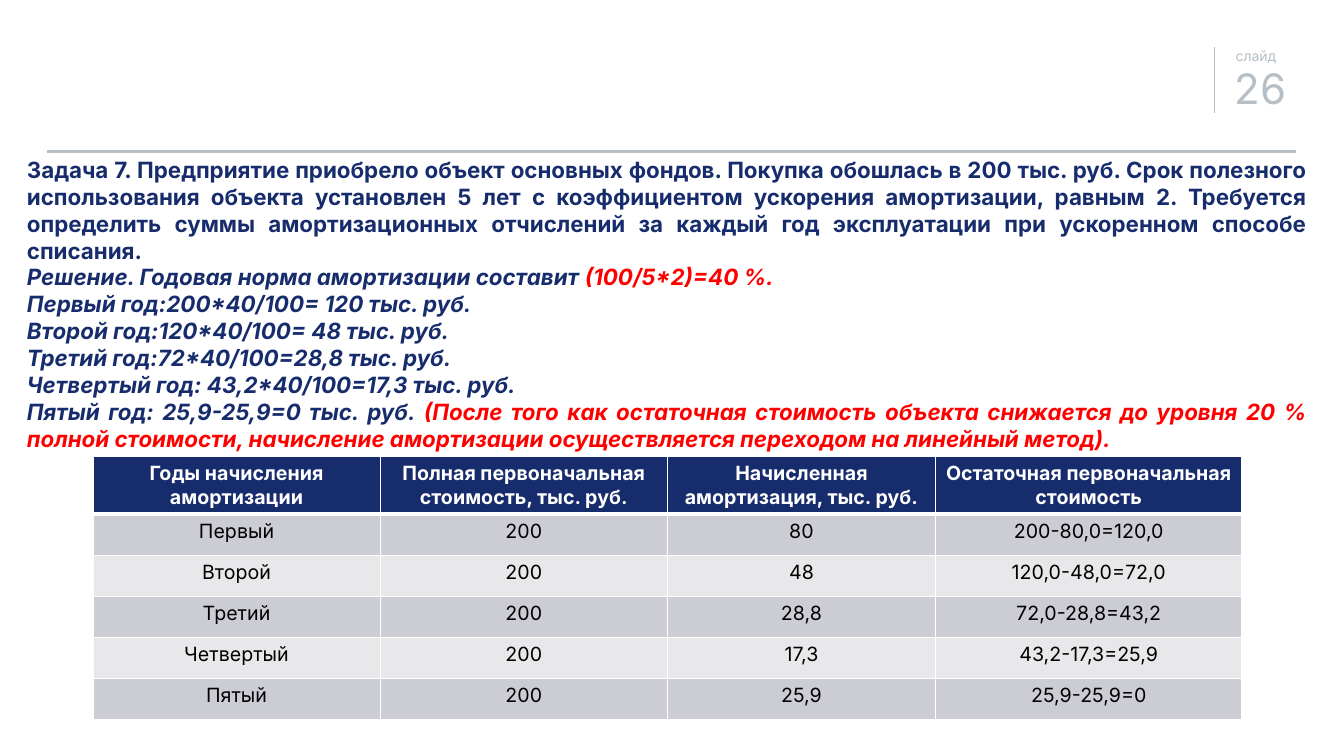
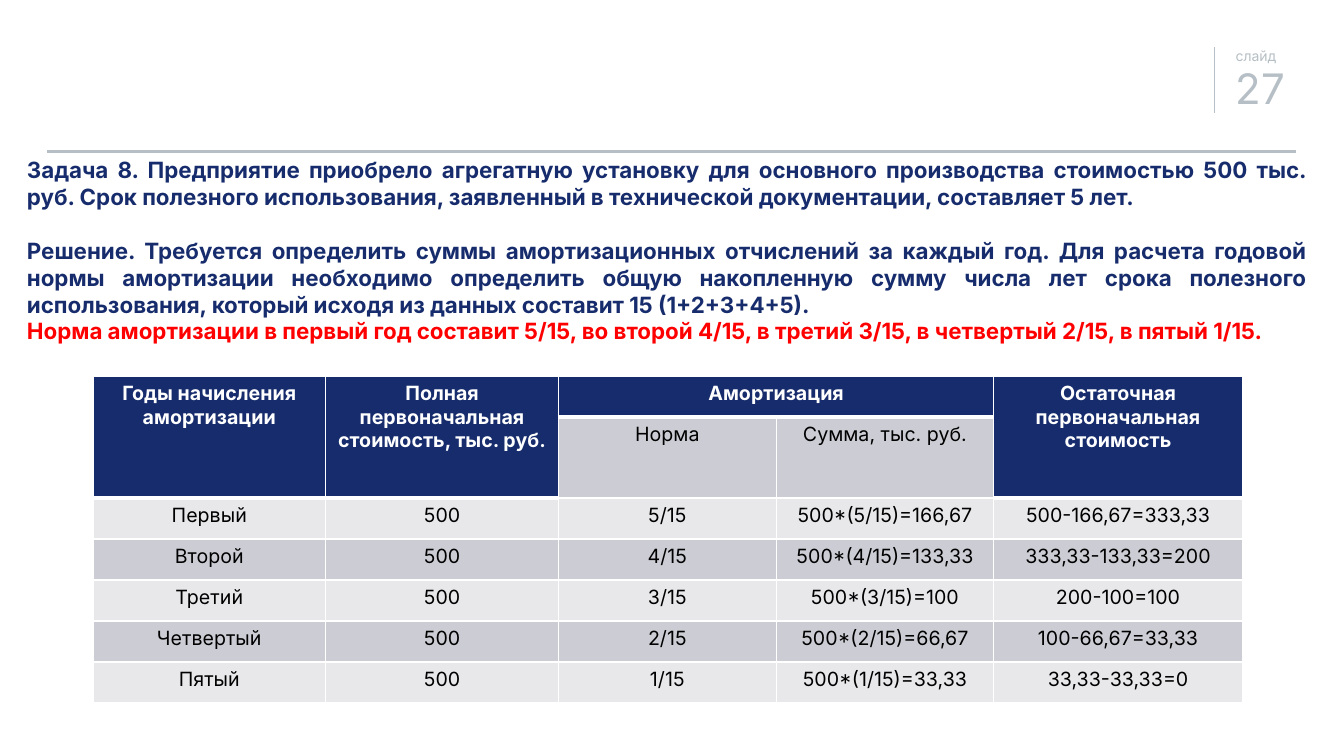
from dataclasses import dataclass
from typing import NamedTuple

from lxml.etree import SubElement
from pptx import Presentation
from pptx.dml.color import RGBColor
from pptx.enum.shapes import MSO_CONNECTOR
from pptx.enum.text import PP_ALIGN
from pptx.oxml.ns import qn
from pptx.slide import Slide
from pptx.table import Table, _Cell
from pptx.text.text import Font
from pptx.util import Pt

NAVY = RGBColor(0x17, 0x2C, 0x6C)
RED = RGBColor(0xFF, 0x00, 0x00)
GREY = RGBColor(0xB6, 0xBF, 0xC5)
WHITE = RGBColor(0xFF, 0xFF, 0xFF)
BLACK = RGBColor(0x00, 0x00, 0x00)
BAND_DARK = RGBColor(0xCC, 0xCD, 0xD4)
BAND_LIGHT = RGBColor(0xE8, 0xE8, 0xEB)
FONT = "Inter"
ROW_HEIGHT = 29.3
TABLE_LEFT = 66.4
YEARS = ["Первый", "Второй", "Третий", "Четвертый", "Пятый"]


class Phrase(NamedTuple):
    text: str
    color: RGBColor = NAVY
    italic: bool = False


class Span(NamedTuple):
    top: int
    left: int
    bottom: int
    right: int


@dataclass
class Statement:
    phrases: list[Phrase]
    space_before: float = 0


@dataclass
class Schedule:
    top: float
    widths: list[float]
    header_heights: list[float]
    rows: list[list[str]]
    spans: list[Span]


@dataclass
class Problem:
    number: int
    statements: list[Statement]
    text_height: float
    schedule: Schedule


def style_font(font: Font, size: float, color: RGBColor, bold: bool = False, italic: bool = False) -> None:
    """Apply the deck font with the given size, colour and emphasis."""
    font.name, font.size, font.bold, font.italic = FONT, Pt(size), bold, italic
    font.color.rgb = color


def draw_rule(slide: Slide, start: tuple[float, float], end: tuple[float, float], width: float) -> None:
    """Draw a grey straight rule without a shadow."""
    rule = slide.shapes.add_connector(MSO_CONNECTOR.STRAIGHT, *map(Pt, start + end))
    rule.line.color.rgb = GREY
    rule.line.width = Pt(width)
    SubElement(rule._element.spPr, qn("a:effectLst"))


def draw_header(slide: Slide, number: int) -> None:
    """Draw the rules and the slide number shared by all slides."""
    draw_rule(slide, (867.6, 33.8), (867.6, 80.6), 1)
    draw_rule(slide, (33.8, 108), (925.9, 108), 2)
    badge = slide.shapes.add_textbox(Pt(867.6), Pt(33.8), Pt(59), Pt(47.5)).text_frame
    badge.word_wrap = True
    badge.margin_left = badge.margin_right = badge.margin_bottom = 0
    badge.margin_top = Pt(1.7)
    badge.text = f"слайд\n{number}"
    for paragraph, size, spacing in zip(badge.paragraphs, (10, 30), (10.6, 34.5)):
        paragraph.alignment = PP_ALIGN.CENTER
        paragraph.line_spacing = Pt(spacing)
        style_font(paragraph.runs[0].font, size, GREY)
    badge.paragraphs[1]._p.get_or_add_pPr().set("marL", str(Pt(6.5)))


def draw_statements(slide: Slide, statements: list[Statement], height: float) -> None:
    """Write the task and its solution as justified paragraphs."""
    frame = slide.shapes.add_textbox(Pt(12.2), Pt(108), Pt(928.8), Pt(height)).text_frame
    frame.word_wrap = True
    for index, statement in enumerate(statements):
        paragraph = frame.add_paragraph() if index else frame.paragraphs[0]
        paragraph.alignment = PP_ALIGN.JUSTIFY
        if statement.space_before:
            paragraph.space_before = Pt(statement.space_before)
        for phrase in statement.phrases:
            run = paragraph.add_run()
            run.text = phrase.text
            style_font(run.font, 16, phrase.color, True, phrase.italic)


def style_cell(cell: _Cell, fill: RGBColor, bottom_width: float) -> None:
    """Give a cell white borders and a solid fill."""
    properties = cell._tc.get_or_add_tcPr()
    for side, width in {"lnL": 1, "lnR": 1, "lnT": 1, "lnB": bottom_width}.items():
        border = SubElement(properties, qn(f"a:{side}"), w=str(Pt(width)))
        SubElement(SubElement(border, qn("a:solidFill")), qn("a:srgbClr"), val=str(WHITE))
    cell.fill.solid()
    cell.fill.fore_color.rgb = fill


def fill_cell(table: Table, row: int, column: int, text: str) -> None:
    """Write and format one cell of a schedule."""
    cell = table.cell(row, column)
    heading = row == 0 or cell.is_spanned
    band = BAND_DARK if row % 2 else BAND_LIGHT
    style_cell(cell, NAVY if heading else band, 3 if heading else 1)
    if not cell.is_spanned:
        cell.text_frame.text = text
        paragraph = cell.text_frame.paragraphs[0]
        paragraph.alignment = PP_ALIGN.CENTER
        style_font(paragraph.runs[0].font, 14, WHITE if heading else BLACK, heading)


def draw_schedule(slide: Slide, schedule: Schedule) -> None:
    """Draw the depreciation schedule as a table."""
    body_count = len(schedule.rows) - len(schedule.header_heights)
    heights = schedule.header_heights + [ROW_HEIGHT] * body_count
    table = slide.shapes.add_table(
        len(heights), len(schedule.widths), Pt(TABLE_LEFT), Pt(schedule.top),
        Pt(sum(schedule.widths)), Pt(sum(heights)),
    ).table
    for column, width in zip(table.columns, schedule.widths):
        column.width = Pt(width)
    for row, height in zip(table.rows, heights):
        row.height = Pt(height)
    for span in schedule.spans:
        table.cell(span.top, span.left).merge(table.cell(span.bottom, span.right))
    for row_index, texts in enumerate(schedule.rows):
        for column_index, text in enumerate(texts):
            fill_cell(table, row_index, column_index, text)


ACCELERATED = Problem(
    number=26,
    text_height=278.6,
    statements=[
        Statement([Phrase(
            "Задача 7. Предприятие приобрело объект основных фондов. Покупка обошлась в 200 тыс. руб. "
            "Срок полезного использования объекта установлен 5 лет с коэффициентом ускорения амортизации, "
            "равным 2. Требуется определить суммы амортизационных отчислений за каждый год эксплуатации "
            "при ускоренном способе списания."
        )]),
        Statement([
            Phrase("Решение. Годовая норма амортизации составит ", italic=True),
            Phrase("(100/5*2)=40 %.", RED, True),
        ]),
        *(Statement([Phrase(year, italic=True)]) for year in (
            "Первый год:200*40/100= 120 тыс. руб.",
            "Второй год:120*40/100= 48 тыс. руб.",
            "Третий год:72*40/100=28,8 тыс. руб.",
            "Четвертый год: 43,2*40/100=17,3 тыс. руб.",
        )),
        Statement([
            Phrase("Пятый год: 25,9-25,9=0 тыс. руб. ", italic=True),
            Phrase(
                "(После того как остаточная стоимость объекта снижается до уровня 20 % полной стоимости, "
                "начисление амортизации осуществляется переходом на линейный метод).", RED, True,
            ),
        ]),
    ],
    schedule=Schedule(
        top=326.3,
        widths=[205.2, 205.2, 191.5, 218.9],
        header_heights=[41],
        rows=[
            ["Годы начисления амортизации", "Полная первоначальная стоимость, тыс. руб.",
             "Начисленная амортизация, тыс. руб.", "Остаточная первоначальная стоимость"],
            *([year, "200", charge, balance] for year, charge, balance in zip(
                YEARS,
                ["80", "48", "28,8", "17,3", "25,9"],
                ["200-80,0=120,0", "120,0-48,0=72,0", "72,0-28,8=43,2", "43,2-17,3=25,9", "25,9-25,9=0"],
            )),
        ],
        spans=[],
    ),
)

SUM_OF_YEARS = Problem(
    number=27,
    text_height=220.3,
    statements=[
        Statement([Phrase(
            "Задача 8. Предприятие приобрело агрегатную установку для основного производства стоимостью "
            "500 тыс. руб. Срок полезного использования, заявленный в технической документации, "
            "составляет 5 лет."
        )]),
        Statement([Phrase(
            "Решение. Требуется определить суммы амортизационных отчислений за каждый год. Для расчета "
            "годовой нормы амортизации необходимо определить общую накопленную сумму числа лет срока "
            "полезного использования, который исходя из данных составит 15 (1+2+3+4+5)."
        )], space_before=19.4),
        Statement([Phrase(
            "Норма амортизации в первый год составит 5/15, во второй 4/15, в третий 3/15, "
            "в четвертый 2/15, в пятый 1/15.", RED,
        )]),
    ],
    schedule=Schedule(
        top=268.8,
        widths=[166.3, 166.3, 155.5, 155.5, 177.5],
        header_heights=[ROW_HEIGHT, 57.2],
        rows=[
            ["Годы начисления амортизации", "Полная первоначальная стоимость, тыс. руб.",
             "Амортизация", "", "Остаточная первоначальная стоимость"],
            ["", "", "Норма", "Сумма, тыс. руб.", ""],
            *([year, "500", f"{share}/15", f"500*({share}/15)={charge}", balance]
              for year, share, charge, balance in zip(
                YEARS,
                range(5, 0, -1),
                ["166,67", "133,33", "100", "66,67", "33,33"],
                ["500-166,67=333,33", "333,33-133,33=200", "200-100=100", "100-66,67=33,33", "33,33-33,33=0"],
            )),
        ],
        spans=[Span(0, 0, 1, 0), Span(0, 1, 1, 1), Span(0, 2, 0, 3), Span(0, 4, 1, 4)],
    ),
)


def main() -> None:
    """Build the slides and save the presentation."""
    deck = Presentation()
    deck.slide_width, deck.slide_height = Pt(960), Pt(540)
    blank_layout = deck.slide_layouts[6]
    for problem in (ACCELERATED, SUM_OF_YEARS):
        slide = deck.slides.add_slide(blank_layout)
        draw_header(slide, problem.number)
        draw_statements(slide, problem.statements, problem.text_height)
        draw_schedule(slide, problem.schedule)
    deck.save("out.pptx")


if __name__ == "__main__":
    main()
